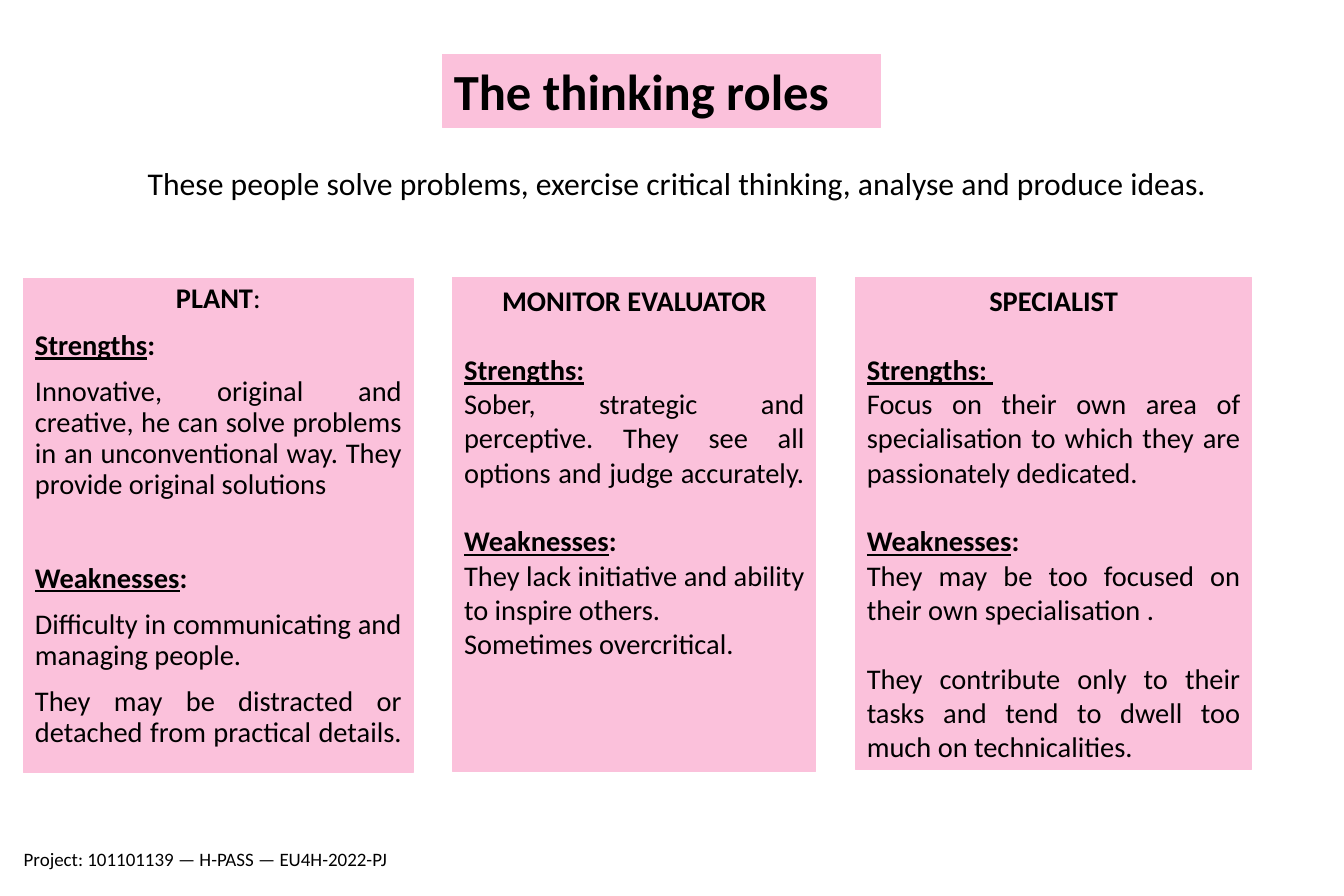
"""Build the slide on the three thinking roles of a team."""
from pptx import Presentation
from pptx.dml.color import RGBColor
from pptx.enum.shapes import MSO_SHAPE as Shape
from pptx.enum.text import MSO_ANCHOR as Anchor, PP_ALIGN as Align
from pptx.util import Cm, Pt

PINK, BLACK = "FBC1DB", "000000"


def color(hex_string):
    return RGBColor.from_string(hex_string)


def add_run(paragraph, text, size, bold=False, underline=False):
    run = paragraph.add_run()
    run.text = text
    font = run.font
    font.name, font.size = "Calibri", Pt(size)
    font.bold, font.underline = bold, underline
    font.color.rgb = color(BLACK)


presentation = Presentation()
presentation.slide_width, presentation.slide_height = Cm(30), Cm(20)
slide = presentation.slides.add_slide(presentation.slide_layouts[6])

captions = [
    ((0.28, 18.8, 9.22, 0.69), "Project: 101101139 — H-PASS — EU4H-2022-PJ", 12, Align.LEFT),
    ((1.22, 3.53, 27.79, 1.12),
     "These people solve problems, exercise critical thinking, analyse and produce ideas.", 20, Align.CENTER),
]
for place, text, size, alignment in captions:
    frame = slide.shapes.add_textbox(*map(Cm, place)).text_frame
    frame.word_wrap = True
    paragraph = frame.paragraphs[0]
    paragraph.alignment = alignment
    add_run(paragraph, text, size)

# Each paragraph: space before in points, then runs of (text, bold, underline).
strengths = [("Strengths", True, True), (":", True, False)]
weaknesses = [("Weaknesses", True, True), (":", True, False)]
panels = [
    ((9.88, 1.22, 9.78, 1.63), 32, Align.LEFT, 1, [
        (0, [("The thinking roles", True, False)]),
    ]),
    ((0.53, 6.22, 8.69, 11.02), 18, Align.CENTER, 0.9, [
        (0, [("PLANT", True, False), (":", False, False)]),
        (10, strengths),
        (10, [("Innovative, original and creative, he can solve problems in an unconventional way. "
               "They provide original solutions", False, False)]),
        (40, weaknesses),
        (10, [("Difficulty in communicating and managing people.", False, False)]),
        (10, [("They may be distracted or detached from practical details. ", False, False)]),
    ]),
    ((10.11, 6.2, 8.1, 11.02), 18, Align.CENTER, 1, [
        (0, [("MONITOR EVALUATOR", True, False)]),
        (22, [("Strengths:", True, True)]),
        (0, [("Sober, strategic and perceptive. They see all options and judge accurately. ", False, False)]),
        (22, weaknesses),
        (0, [("They lack initiative and ability to inspire others.", False, False)]),
        (0, [("Sometimes overcritical.", False, False)]),
    ]),
    ((19.1, 6.2, 8.84, 10.97), 18, Align.CENTER, 1, [
        (0, [("SPECIALIST", True, False)]),
        (22, [("Strengths: ", True, True)]),
        (0, [("Focus on their own area of specialisation to which they are passionately dedicated.", False, False)]),
        (22, weaknesses),
        (0, [("They may be too focused on their own specialisation .", False, False)]),
        (22, [("They contribute only to their tasks and tend to dwell too much on technicalities.", False, False)]),
    ]),
]
for place, size, heading_alignment, line_spacing, paragraphs in panels:
    panel = slide.shapes.add_shape(Shape.RECTANGLE, *map(Cm, place))
    panel.shadow.inherit = False
    panel.fill.solid()
    panel.fill.fore_color.rgb = panel.line.color.rgb = color(PINK)
    panel.line.width = Pt(0.75)
    frame = panel.text_frame
    frame.word_wrap = True
    frame.vertical_anchor = Anchor.TOP
    for index, (space_before, runs) in enumerate(paragraphs):
        paragraph = frame.add_paragraph() if index else frame.paragraphs[0]
        paragraph.alignment = Align.JUSTIFY if index else heading_alignment
        paragraph.line_spacing = line_spacing
        paragraph.space_before = Pt(space_before)
        for text, bold, underline in runs:
            add_run(paragraph, text, size, bold, underline)

presentation.save("out.pptx")
